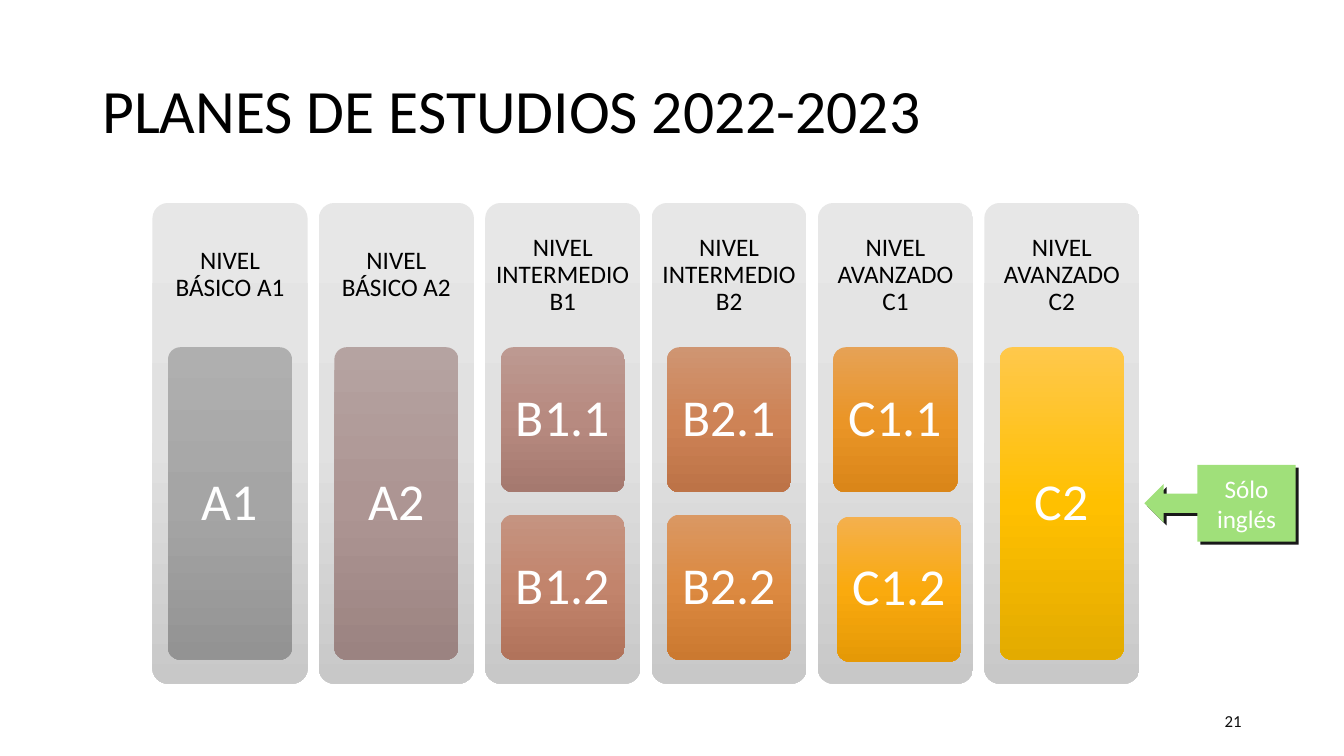
from copy import deepcopy
from dataclasses import dataclass

from lxml import etree
from pptx import Presentation
from pptx import util as u
from pptx.dml import color
from pptx.enum import shapes, text
from pptx.oxml import ns


@dataclass(frozen=True)
class Theme:
    """Colours, font and type sizes of the slide."""
    font: str = "Calibri"
    ink: str = "000000"
    page_ink: str = "0D0D0D"
    paper: str = "FFFFFF"
    callout: str = "A0E07A"
    panel: tuple = ("E7E7E7", "E1E1E1", "C8C8C8")
    title_size: int = 44
    course_size: int = 37
    level_size: int = 18
    page_size: int = 12


@dataclass(frozen=True)
class Box:
    """A rectangle in points."""
    left: float
    top: float
    width: float
    height: float

    def lengths(self):
        """Return the four lengths for python-pptx."""
        return [u.Pt(n) for n in (self.left, self.top, self.width, self.height)]


THEME = Theme()
PLANS = [
    ("NIVEL BÁSICO A1", [("A1", ("AFAFAF", "A5A5A5", "939393"))]),
    ("NIVEL BÁSICO A2", [("A2", ("B5A3A1", "AD9593", "9B8381"))]),
    ("NIVEL INTERMEDIO B1", [("B1.1", ("BD9991", "B78A80", "A5796F")),
                             ("B1.2", ("C59481", "C2846C", "B1735B"))]),
    ("NIVEL INTERMEDIO B2", [("B2.1", ("CF9572", "CE8356", "BD7347")),
                             ("B2.2", ("DA9863", "DC8940", "CB7930"))]),
    ("NIVEL AVANZADO C1", [("C1.1", ("E6A256", "EA9527", "DA8619")),
                           ("C1.2", ("F4B04E", "FAAA0E", "E59906"))]),
    ("NIVEL AVANZADO C2", [("C2", ("FFC84B", "FFC000", "E3AB00"))]),
]
NUDGES = {"C1.2": (2.7, 1.4)}


def write(holder, words, size, ink, align=text.PP_ALIGN.CENTER, spacing=0.9, insets=(7.2, 3.6)):
    """Set vertically centred words in a shape or text box."""
    frame = holder.text_frame
    frame.text = words
    frame.word_wrap = True
    frame.vertical_anchor = text.MSO_ANCHOR.MIDDLE
    frame.margin_left = frame.margin_right = u.Pt(insets[0])
    frame.margin_top = frame.margin_bottom = u.Pt(insets[1])
    paragraph = frame.paragraphs[0]
    paragraph.alignment = align
    paragraph.line_spacing = spacing
    font = paragraph.runs[0].font
    font.name = THEME.font
    font.size = u.Pt(size)
    font.color.rgb = color.RGBColor.from_string(ink)


def add_label(slide, box, words, size, ink, **layout):
    """Place words in a text box."""
    write(slide.shapes.add_textbox(*box.lengths()), words, size, ink, **layout)


def add_tile(slide, box, tints):
    """Draw a rounded tile with a three-stop vertical gradient."""
    tile = slide.shapes.add_shape(shapes.MSO_SHAPE.ROUNDED_RECTANGLE, *box.lengths())
    tile.adjustments[0] = 0.1
    tile.shadow.inherit = False
    tile.line.fill.background()
    tile.fill.gradient()
    tile.fill.gradient_angle = 270
    stop_list = tile._element.spPr.find(".//" + ns.qn("a:gsLst"))
    stop_list.append(deepcopy(stop_list[0]))
    for stop, position, tint in zip(tile.fill.gradient_stops, (0, 0.5, 1), tints):
        stop.position = position
        stop.color.rgb = color.RGBColor.from_string(tint)
    return tile


def add_level(slide, box, level, courses):
    """Draw one level's panel, heading and stacked course cards."""
    add_tile(slide, box, THEME.panel)
    heading = Box(box.left, box.top, box.width, box.height * 0.3)
    add_label(slide, heading, level, THEME.level_size, THEME.ink, insets=(5, 5))
    gap = 16
    stack_height = box.height * 0.65
    card_height = (stack_height - gap * (len(courses) - 1)) / len(courses)
    for row, (course, tints) in enumerate(courses):
        shift_x, shift_y = NUDGES.get(course, (0, 0))
        card = Box(box.left + box.width * 0.1 + shift_x,
                   box.top + box.height * 0.3 + row * (card_height + gap) + shift_y,
                   box.width * 0.8, card_height)
        write(add_tile(slide, card, tints), course, THEME.course_size, THEME.paper,
              insets=(5, 5))


def add_levels(slide, box):
    """Spread the level columns evenly over the box."""
    gap = 8
    width = (box.width - gap * (len(PLANS) - 1)) / len(PLANS)
    for column, (level, courses) in enumerate(PLANS):
        left = box.left + column * (width + gap)
        add_level(slide, Box(left, box.top, width, box.height), level, courses)


def add_callout(slide, box, words):
    """Draw the left-pointing note with its hard shadow."""
    note = slide.shapes.add_shape(shapes.MSO_SHAPE.LEFT_ARROW_CALLOUT, *box.lengths())
    note.fill.solid()
    note.fill.fore_color.rgb = color.RGBColor.from_string(THEME.callout)
    note.line.fill.background()
    note.shadow.inherit = False
    effects = note._element.spPr.find(ns.qn("a:effectLst"))
    shadow = etree.SubElement(effects, ns.qn("a:outerShdw"), blurRad="0",
                              dist=str(u.Pt(3)), dir="2700000", algn="tl", rotWithShape="0")
    shade = etree.SubElement(shadow, ns.qn("a:srgbClr"), val=THEME.ink)
    etree.SubElement(shade, ns.qn("a:alpha"), val="90000")
    write(note, words, THEME.level_size, THEME.paper, spacing=1)


def build_plan_slide(deck):
    """Compose the study plan slide."""
    slide = deck.slides.add_slide(deck.slide_layouts[6])
    add_label(slide, Box(66, 28.8, 828, 104.4), "PLANES DE ESTUDIOS 2022-2023",
              THEME.title_size, THEME.ink, align=text.PP_ALIGN.LEFT)
    add_levels(slide, Box(108.9, 145, 705, 343.4))
    add_label(slide, Box(678, 500.6, 216, 28.8), "21", THEME.page_size, THEME.page_ink,
              align=text.PP_ALIGN.RIGHT, spacing=1)
    add_callout(slide, Box(817.5, 332, 108, 55), "Sólo inglés")


def main():
    """Create and save the deck."""
    deck = Presentation()
    deck.slide_width, deck.slide_height = u.Pt(960), u.Pt(540)
    build_plan_slide(deck)
    deck.save("out.pptx")


if __name__ == "__main__":
    main()
